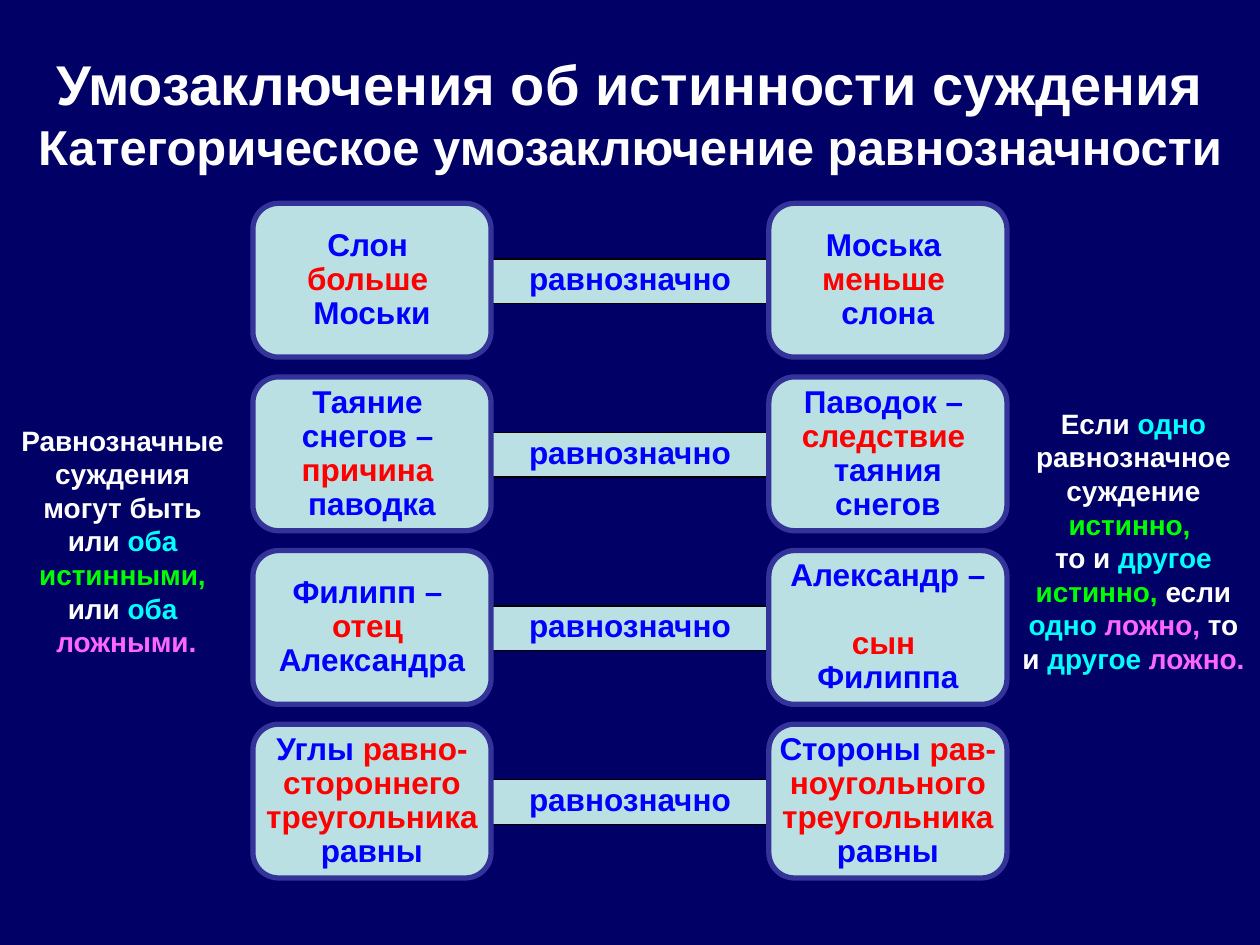
from copy import deepcopy

from pptx import Presentation
from pptx.dml.color import RGBColor
from pptx.enum.shapes import MSO_SHAPE as Shape
from pptx.enum.text import MSO_ANCHOR as Anchor, MSO_AUTO_SIZE as AutoSize, PP_ALIGN as Align
from pptx.util import Cm, Pt

NAVY, WHITE, PALE, FRAME, BLACK = "000066", "FFFFFF", "BBE0E3", "333399", "000000"
BLUE, RED = "0000FF", "FF0000"
CYAN, GREEN, PINK = "00FFFF", "00FF00", "FF66FF"

# Each pair of equivalent judgements: left text, right text, side inset in cm
PAIRS = [
    ([("Слон \n", BLUE), ("больше \n", RED), ("Моськи", BLUE)],
     [("Моська \n", BLUE), ("меньше \n", RED), ("слона", BLUE)], 0.25),
    ([("Таяние \nснегов – \n", BLUE), ("причина \n", RED), ("паводка", BLUE)],
     [("Паводок – \n", BLUE), ("следствие \n", RED), ("таяния снегов", BLUE)], 0.25),
    ([("Филипп – \n", BLUE), ("отец \n", RED), ("Александра", BLUE)],
     [("Александр – \n", BLUE), ("сын \n", RED), ("Филиппа", BLUE)], 0.25),
    ([("Углы ", BLUE), ("равно-стороннего треугольника ", RED), ("равны", BLUE)],
     [("Стороны ", BLUE), ("рав-ноугольного треугольника ", RED), ("равны", BLUE)], 0),
]
LEFT_NOTE = [
    ("Равнозначные \nсуждения \nмогут быть \nили ", WHITE), ("оба \n", CYAN),
    ("истинными, \n", GREEN), ("или ", WHITE), ("оба \n", CYAN), ("ложными.", PINK),
]
RIGHT_NOTE = [
    ("Если ", WHITE), ("одно", CYAN), (" равнозначное суждение ", WHITE),
    ("истинно, \n", GREEN), ("то и ", WHITE), ("другое ", CYAN), ("истинно,", GREEN),
    (" если ", WHITE), ("одно ", CYAN), ("ложно,", PINK), (" то и ", WHITE),
    ("другое ", CYAN), ("ложно.", PINK),
]


def rgb(colour):
    return RGBColor.from_string(colour)


def add_run(p, text, size, colour):
    r = p.add_run()
    r.text = text
    r.font.name, r.font.size, r.font.bold = "Arial", Pt(size), True
    r.font.color.rgb = rgb(colour)
    return r


def write(tf, parts, size):
    """Fill the frame with one centred paragraph of coloured parts; a newline is a line break."""
    tf.word_wrap = True
    tf.vertical_anchor = Anchor.MIDDLE
    p = tf.paragraphs[0]
    p.alignment = Align.CENTER
    for text, colour in parts:
        for i, line in enumerate(text.split("\n")):
            if i:
                p.add_line_break()
                # The break takes the size of the run before it
                p._p[-1].append(deepcopy(r._r.rPr))
            if line:
                r = add_run(p, line, size, colour)
    return p


def add_box(slide, kind, x, y, w, h, line, width):
    s = slide.shapes.add_shape(kind, Cm(x), Cm(y), Cm(w), Cm(h))
    s.shadow.inherit = False
    s.fill.solid()
    s.fill.fore_color.rgb = rgb(PALE)
    s.line.color.rgb = rgb(line)
    s.line.width = Pt(width)
    return s


def add_title(slide, x, y, w, h):
    s = slide.shapes.title
    s.left, s.top, s.width, s.height = Cm(x), Cm(y), Cm(w), Cm(h)
    tf = s.text_frame
    tf.auto_size = AutoSize.NONE
    p = write(tf, [("Умозаключения об истинности суждения\n", WHITE)], 32)
    add_run(p, "Категорическое умозаключение равнозначности", 28, WHITE)


def add_note(slide, parts, x, y, w, h):
    s = slide.shapes.add_textbox(Cm(x), Cm(y), Cm(w), Cm(h))
    write(s.text_frame, parts, 16)


def add_pair(slide, left, right, inset, x, y, w, h):
    """Two rounded boxes at the ends of the area, joined by a label band."""
    box_w, overlap, band_h = 4.8, 0.7, 0.9
    band = add_box(slide, Shape.RECTANGLE, x + box_w - overlap, y + 1.12,
                   w - 2 * (box_w - overlap), band_h, BLACK, 0.75)
    tf = band.text_frame
    write(tf, [("равнозначно", BLUE)], 18)
    tf.word_wrap = False
    tf.margin_top, tf.margin_bottom = 0, Cm(0.13)
    for parts, box_x in ((left, x), (right, x + w - box_w)):
        s = add_box(slide, Shape.ROUNDED_RECTANGLE, box_x, y, box_w, h, FRAME, 3)
        s.text_frame.margin_left = s.text_frame.margin_right = Cm(inset)
        write(s.text_frame, parts, 18).line_spacing = 0.9


def main():
    prs = Presentation()
    prs.slide_width, prs.slide_height = Cm(25.4), Cm(19.05)
    slide = prs.slides.add_slide(prs.slide_layouts[5])
    slide.background.fill.solid()
    slide.background.fill.fore_color.rgb = rgb(NAVY)

    top, note_w, note_h, pitch = 4.1, 5.1, 13.6, 3.5
    add_title(slide, 0, 0.76, 25.4, 3)
    add_note(slide, LEFT_NOTE, 0, top, note_w, note_h)
    add_note(slide, RIGHT_NOTE, 25.4 - note_w, top, note_w, note_h)
    for i, (left, right, inset) in enumerate(PAIRS):
        add_pair(slide, left, right, inset, note_w, top + i * pitch, 25.4 - 2 * note_w, 3.1)
    prs.save("out.pptx")


if __name__ == "__main__":
    main()
